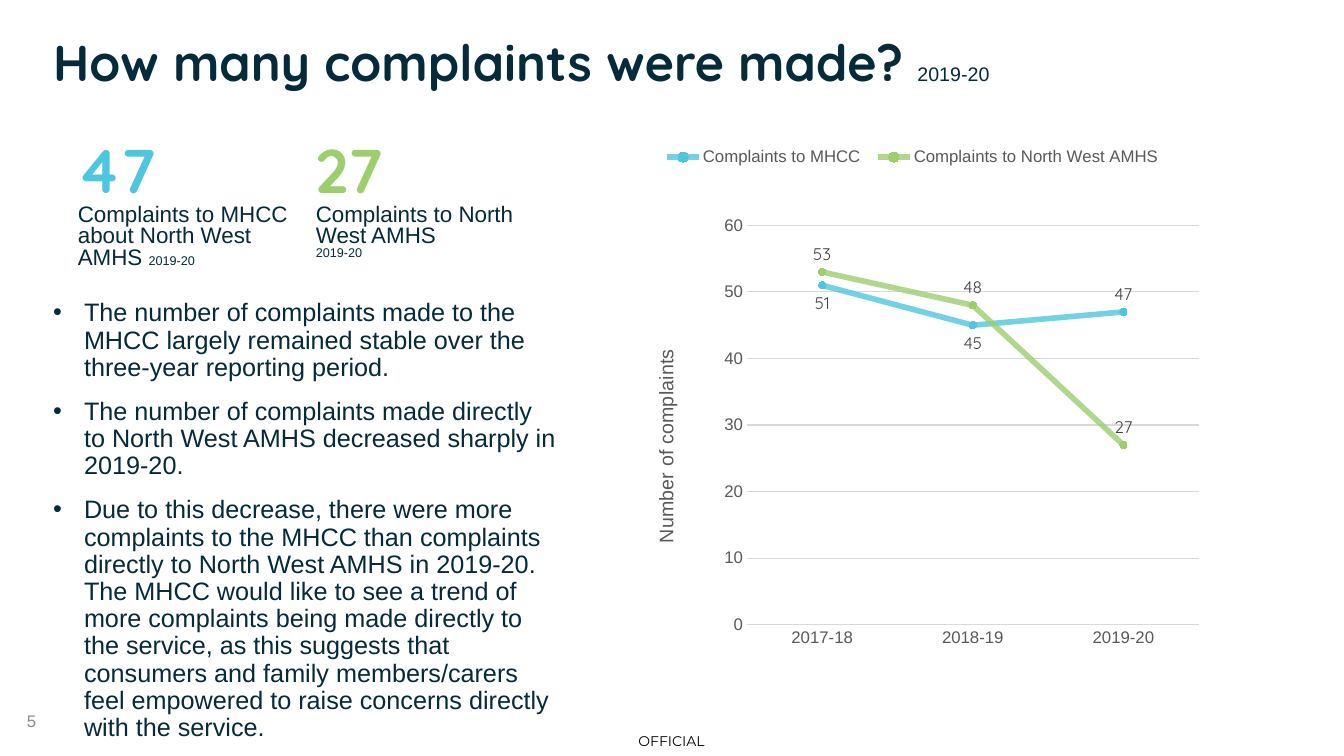
"""Build the slide on how many complaints were made, with a line chart."""
import pptx
import pptx.chart.data
import pptx.dml.color
import pptx.enum.chart
import pptx.enum.text
import pptx.oxml
import pptx.oxml.ns
import pptx.util

PX = 9071
NAVY, BLUE, GREEN = "052A39", "4FC6DF", "9DCE6E"
GREY, DARK, PALE = "595959", "404040", "D9D9D9"
MID = pptx.enum.text.MSO_ANCHOR.MIDDLE
LEFT, CENTER = pptx.enum.text.PP_ALIGN.LEFT, pptx.enum.text.PP_ALIGN.CENTER


def rgb(value):
    return pptx.dml.color.RGBColor.from_string(value)


def write(p, text, size=16, color=NAVY, face="Arial", bold=False):
    r = p.add_run()
    r.text = text
    r.font.size = pptx.util.Pt(size)
    r.font.name = face
    r.font.bold = bold
    r.font.color.rgb = rgb(color)


prs = pptx.Presentation()
prs.slide_width, prs.slide_height = 1344 * PX, 756 * PX
s = prs.slides.add_slide(prs.slide_layouts[1])

title, body = s.placeholders
for sp, box in ((title, (43, 33, 1252, 94)), (body, (43, 295, 526, 437))):
    sp.left, sp.top, sp.width, sp.height = [v * PX for v in box]
    sp.text_frame.vertical_anchor = pptx.enum.text.MSO_ANCHOR.TOP
    sp.text_frame.auto_size = pptx.enum.text.MSO_AUTO_SIZE.NONE

p = title.text_frame.paragraphs[0]
p.alignment = LEFT
p.line_spacing = 0.9
write(p, "How many complaints were made? ", size=36, face="Quicksand", bold=True)
write(p, "2019-20", size=14)

points = (
    "The number of complaints made to the MHCC largely remained stable over the three-year reporting period.",
    "The number of complaints made directly to North West AMHS decreased sharply in 2019-20.",
    "Due to this decrease, there were more complaints to the MHCC than complaints directly to North West AMHS "
    "in 2019-20. The MHCC would like to see a trend of more complaints being made directly to the service, as "
    "this suggests that consumers and family members/carers feel empowered to raise concerns directly with the "
    "service.",
)
tf = body.text_frame
for i, text in enumerate(points):
    p = tf.add_paragraph() if i else tf.paragraphs[0]
    p.line_spacing = 0.9
    p.space_before = pptx.util.Pt(6 if i else 0)
    p.space_after = pptx.util.Pt(6)
    pPr = p._p.get_or_add_pPr()
    pPr.set("marL", str(31 * PX))
    pPr.set("indent", str(-31 * PX))
    bullet = pptx.oxml.parse_xml('<a:buChar %s char="•"/>' % pptx.oxml.ns.nsdecls("a"))
    pPr.append(bullet)
    write(p, text, size=18)

totals = (
    (68, "47", BLUE, "Complaints to MHCC about North West AMHS ", False),
    (306, "27", GREEN, "Complaints to North West AMHS ", True),
)
for left, total, color, caption, year_below in totals:
    tf = s.shapes.add_textbox(left * PX, 141 * PX, 239 * PX, 125 * PX).text_frame
    tf.word_wrap = True
    p = tf.paragraphs[0]
    p.line_spacing = 0.8
    write(p, total, size=44, color=color, face="Quicksand", bold=True)
    p = tf.add_paragraph()
    p.line_spacing = 0.8
    write(p, caption)
    if year_below:
        p.add_line_break()
    write(p, "2019-20", size=9)

footers = (
    ((17, 701, 302, 40), "5", LEFT, 12, "8C8C8C", "Arial"),
    ((620, 725, 103, 31), "OFFICIAL", CENTER, 10, "000000", "Montserrat"),
)
for box, text, align, size, color, face in footers:
    tf = s.shapes.add_textbox(*[v * PX for v in box]).text_frame
    tf.word_wrap = True
    tf.vertical_anchor = MID
    p = tf.paragraphs[0]
    p.alignment = align
    write(p, text, size=size, color=color, face=face)

data = pptx.chart.data.CategoryChartData()
data.categories = ("2017-18", "2018-19", "2019-20")
data.add_series("Complaints to MHCC", (51, 45, 47))
data.add_series("Complaints to North West AMHS", (53, 48, 27))
chart = s.shapes.add_chart(
    pptx.enum.chart.XL_CHART_TYPE.LINE_MARKERS, 644 * PX, 127 * PX, 572 * PX, 547 * PX, data
).chart
chart.has_title = False
chart.has_legend = True
chart.legend.position = pptx.enum.chart.XL_LEGEND_POSITION.BOTTOM
chart.legend.include_in_layout = False

cat, val = chart.category_axis, chart.value_axis
for axis in (cat, val):
    axis.major_tick_mark = pptx.enum.chart.XL_TICK_MARK.NONE
    axis.minor_tick_mark = pptx.enum.chart.XL_TICK_MARK.NONE
val.minimum_scale, val.maximum_scale, val.major_unit = 0, 60, 10
val.format.line.fill.background()
val.has_major_gridlines = True
for line in (cat.format.line, val.major_gridlines.format.line):
    line.color.rgb = rgb(PALE)
    line.width = pptx.util.Pt(0.75)
write(val.axis_title.text_frame.paragraphs[0], "Number of complaints", size=14, color=GREY)

fonts = [(chart.font, GREY, "Arial"), (chart.legend.font, GREY, "Arial")]
fonts += [(axis.tick_labels.font, GREY, "Arial") for axis in (cat, val)]
above = pptx.enum.chart.XL_LABEL_POSITION.ABOVE
below = pptx.enum.chart.XL_LABEL_POSITION.BELOW
for series, color in zip(chart.plots[0].series, (BLUE, GREEN)):
    series.smooth = False
    series.format.line.width = pptx.util.Pt(4)
    series.format.line.color.rgb = rgb(color)
    clr = series.format.line._ln.find(".//" + pptx.oxml.ns.qn("a:srgbClr"))
    clr.append(pptx.oxml.parse_xml('<a:alpha %s val="80000"/>' % pptx.oxml.ns.nsdecls("a")))
    series.marker.style = pptx.enum.chart.XL_MARKER_STYLE.CIRCLE
    series.marker.size = 5
    series.marker.format.fill.solid()
    series.marker.format.fill.fore_color.rgb = rgb(color)
    series.marker.format.line.color.rgb = rgb(color)
    series.data_labels.show_value = True
    series.data_labels.position = above
    fonts.append((series.data_labels.font, DARK, "Quicksand"))
for i in (0, 1):
    label = chart.plots[0].series[0].points[i].data_label
    fonts.append((label.font, DARK, "Quicksand"))
    label.position = below
for font, color, face in fonts:
    font.size = pptx.util.Pt(12)
    font.name = face
    font.bold = False
    font.color.rgb = rgb(color)

places = (
    (chart._chartSpace.chart.plotArea, "inner", {"x": 0.18, "y": 0.18, "w": 0.79, "h": 0.73}),
    (chart.legend._element, None, {"x": 0.02, "y": 0.03, "w": 0.9, "h": 0.05}),
    (val.axis_title._element, None, {"x": 0.01, "y": 0.4}),
)
for element, target, place in places:
    parts = '<c:layoutTarget val="%s"/>' % target if target else ""
    parts += "".join('<c:%sMode val="edge"/>' % key for key in place if key in "xy")
    parts += "".join('<c:%s val="%s"/>' % item for item in place.items())
    layout = pptx.oxml.parse_xml(
        "<c:layout %s><c:manualLayout>%s</c:manualLayout></c:layout>" % (pptx.oxml.ns.nsdecls("c"), parts)
    )
    old = element.find(pptx.oxml.ns.qn("c:layout"))
    if old is not None:
        element.remove(old)
    if target:
        element.insert(0, layout)
    else:
        element.find(pptx.oxml.ns.qn("c:overlay")).addprevious(layout)

prs.save("out.pptx")
